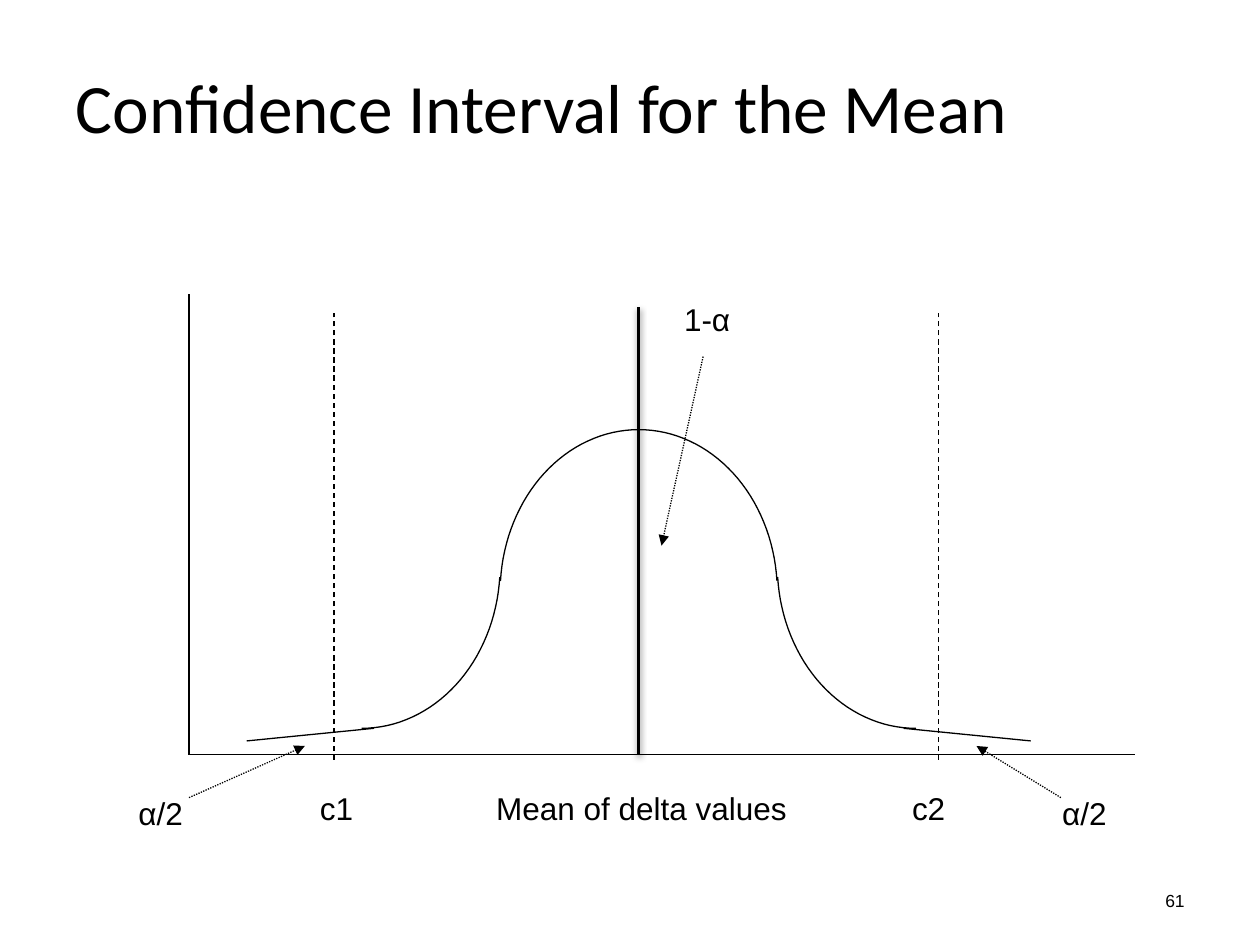
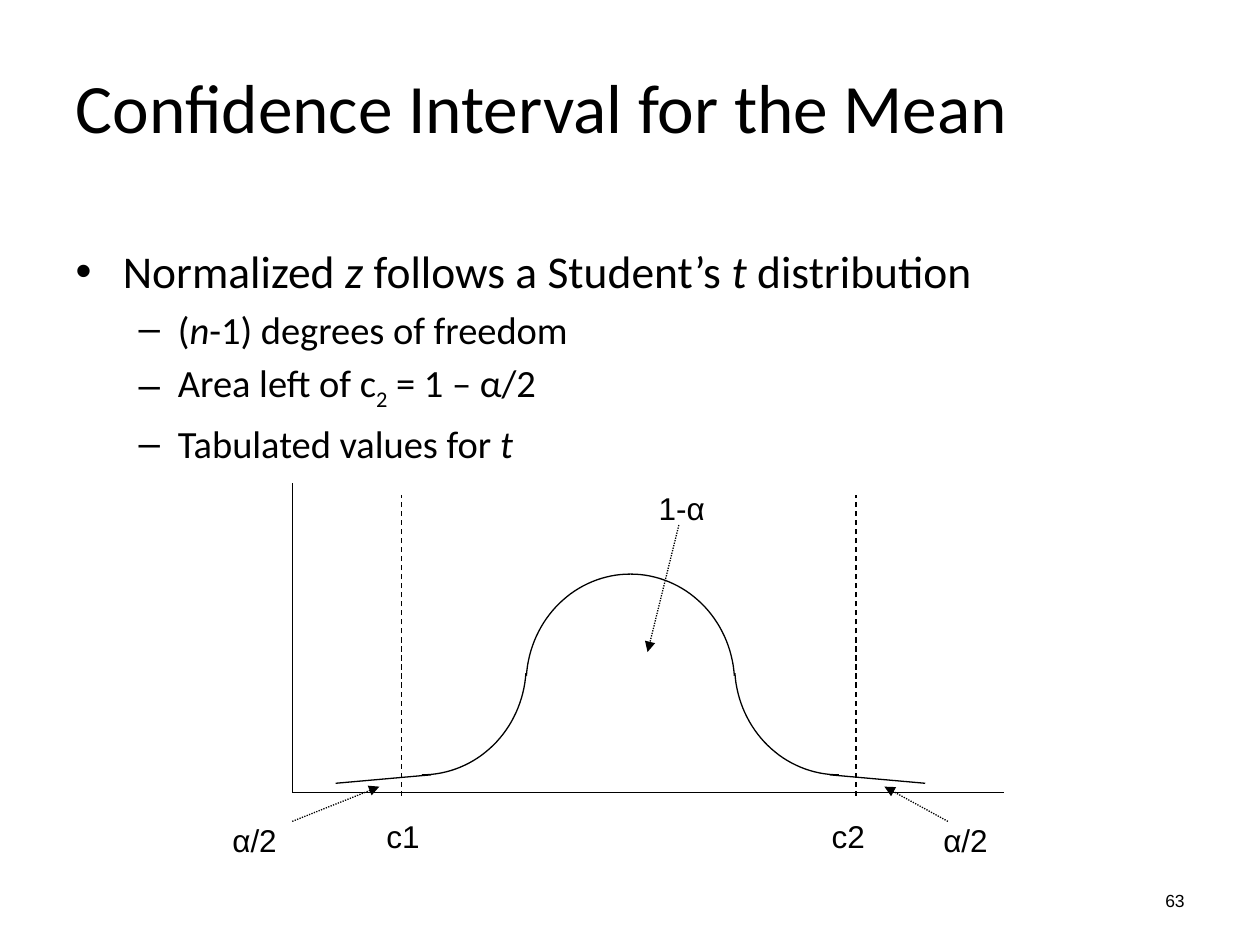
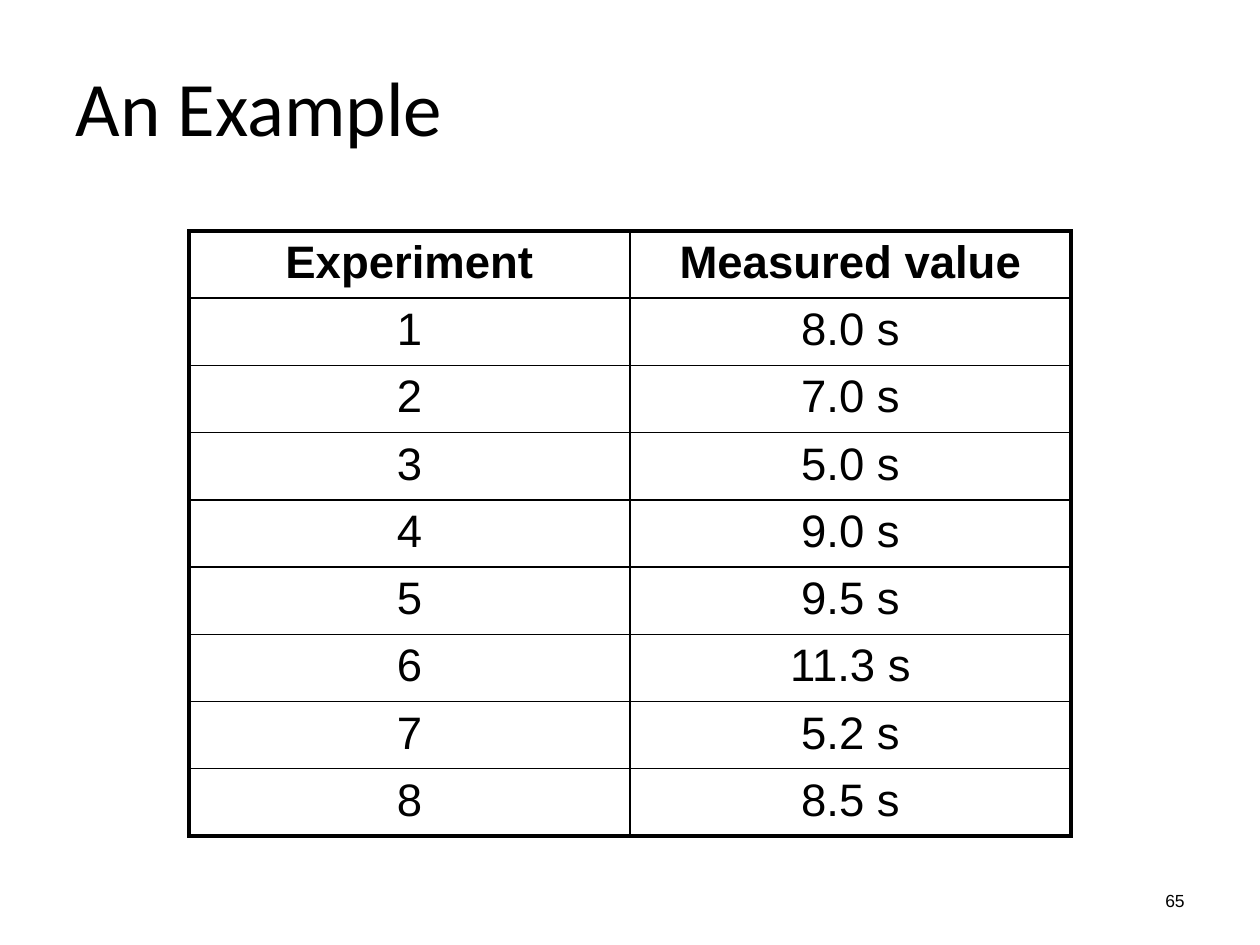
from math import cos, radians, sin

from lxml.etree import SubElement
from pptx import Presentation
from pptx.dml.color import RGBColor
from pptx.enum.dml import MSO_LINE
from pptx.enum.shapes import MSO_CONNECTOR
from pptx.enum.text import MSO_ANCHOR, MSO_AUTO_SIZE, PP_ALIGN
from pptx.oxml.ns import qn
from pptx.util import Pt

COLORS = {"ink": "000000", "paper": "FFFFFF"}
HEAD_FONT = "Calibri"
TEXT_FONT = "Arial"
TITLE_AND_BODY, TITLE_ONLY = 1, 5
ARC_STEPS = 32
ARC_END = 86


class Deck:
    def __init__(self):
        self.prs = Presentation()
        self.prs.slide_width, self.prs.slide_height = Pt(720), Pt(540)
        self.ink = RGBColor.from_string(COLORS["ink"])
        self.s = None

    def style(self, p, size, font=TEXT_FONT, bold=False):
        for r in p.runs:
            r.font.size, r.font.name, r.font.bold = Pt(size), font, bold
            r.font.color.rgb = self.ink

    def place(self, sp, x, y, w, h):
        sp.left, sp.top, sp.width, sp.height = Pt(x), Pt(y), Pt(w), Pt(h)

    def slide(self, layout, title, number, size=39.6):
        self.s = self.prs.slides.add_slide(self.prs.slide_layouts[layout])
        fill = self.s.background.fill
        fill.solid()
        fill.fore_color.rgb = RGBColor.from_string(COLORS["paper"])
        sp = self.s.shapes.title
        self.place(sp, 36, 9.4, 594, 102)
        tf = sp.text_frame
        tf.text = title
        tf.auto_size = MSO_AUTO_SIZE.NONE
        tf.vertical_anchor = MSO_ANCHOR.MIDDLE
        tf.paragraphs[0].alignment = PP_ALIGN.LEFT
        self.style(tf.paragraphs[0], size, HEAD_FONT)
        tf = self.text(number, 516, 500.4, 168, size=10, wrap=True)
        tf.vertical_anchor = MSO_ANCHOR.MIDDLE
        tf.paragraphs[0].alignment = PP_ALIGN.RIGHT

    def text(self, text, x, y, w, size=18, wrap=False):
        sp = self.s.shapes.add_textbox(Pt(x), Pt(y), Pt(w), Pt(28.8))
        tf = sp.text_frame
        tf.text = text
        tf.word_wrap = wrap
        self.style(tf.paragraphs[0], size)
        return tf

    def bullets(self, items, x, y, w, h):
        sp = self.s.placeholders[1]
        self.place(sp, x, y, w, h)
        tf = sp.text_frame
        tf.auto_size = MSO_AUTO_SIZE.NONE
        for i, (level, parts) in enumerate(items):
            p = tf.add_paragraph() if i else tf.paragraphs[0]
            p.level = level
            for text, kind in parts:
                r = p.add_run()
                r.text = text
                r.font.italic = kind == "italic"
                if kind == "sub":
                    r._r.get_or_add_rPr().set("baseline", "-25000")
            self.style(p, 22 if level else 26, HEAD_FONT)

    def line(self, start, end, width=0.75, dash=None, arrow=False, shadow=False):
        ends = [Pt(v) for v in (*start, *end)]
        cxn = self.s.shapes.add_connector(MSO_CONNECTOR.STRAIGHT, *ends)
        cxn.line.color.rgb = self.ink
        cxn.line.width = Pt(width)
        if dash:
            cxn.line.dash_style = dash
        spPr = cxn._element.spPr
        if arrow:
            SubElement(spPr.find(qn("a:ln")), qn("a:tailEnd"), type="triangle")
        effects = SubElement(spPr, qn("a:effectLst"))
        if shadow:
            outer = SubElement(effects, qn("a:outerShdw"), blurRad="40000",
                               dist="20000", dir="5400000", rotWithShape="0")
            clr = SubElement(outer, qn("a:srgbClr"), val=COLORS["ink"])
            SubElement(clr, qn("a:alpha"), val="38000")

    def curve(self, points):
        pts = [(Pt(x), Pt(y)) for x, y in points]
        builder = self.s.shapes.build_freeform(*pts[0])
        builder.add_line_segments(pts[1:], close=False)
        sp = builder.convert_to_shape()
        sp.shadow.inherit = False
        sp.fill.background()
        sp.line.color.rgb = self.ink
        sp.line.width = Pt(0.75)

    def border(self, cell, widths):
        tcPr = cell._tc.get_or_add_tcPr()
        for side, width in widths.items():
            ln = SubElement(tcPr, qn(f"a:ln{side}"), w=str(Pt(width)))
            fill = SubElement(ln, qn("a:solidFill"))
            SubElement(fill, qn("a:srgbClr"), val=COLORS["ink"])

    def table(self, rows, x, y, w, h):
        n, m = len(rows), len(rows[0])
        tbl = self.s.shapes.add_table(n, m, Pt(x), Pt(y), Pt(w), Pt(h)).table
        tbl.first_row = tbl.horz_banding = False
        for i, row in enumerate(rows):
            for j, value in enumerate(row):
                cell = tbl.cell(i, j)
                cell.text = value
                p = cell.text_frame.paragraphs[0]
                p.alignment = PP_ALIGN.CENTER
                self.style(p, 26, bold=i == 0)
                outer = {"L": j == 0, "R": j == m - 1, "T": i == 0, "B": i == n - 1}
                self.border(cell, {k: 2.25 if v else 1 for k, v in outer.items()})
                cell.fill.background()


def draw_distribution(deck, left, bottom, sx=1, sy=1, left_label_width=39.6):
    def at(x, y):
        return left + x * sx, bottom - y * sy

    center, rx, ry = 257, 79.2, 92.9
    for side in (-1, 1):
        arcs = [(center, 92.9, side, 1), (center + side * 2 * rx, 108, -side, -1)]
        for cx, cy, dx, dy in arcs:
            angles = [radians(ARC_END * i / ARC_STEPS) for i in range(ARC_STEPS + 1)]
            deck.curve([at(cx + dx * rx * sin(a), cy + dy * ry * cos(a)) for a in angles])
        deck.line(at(center + side * 151.4, 15.1), at(center + side * 224, 7.9))

    deck.line(at(0, 0), at(540.7, 0))
    deck.line(at(0, 0), at(0, 263.5))
    for x in (82.8, 428.4):
        deck.line(at(x, -2.9), at(x, 252.7), dash=MSO_LINE.DASH)

    labels = [("c1", 84.6, -15.8, 33.8), ("c2", 423, -15.8, 33.8),
              ("1-α", 296.3, 263.5, 41), ("α/2", -16.2, -18.7, left_label_width),
              ("α/2", 511.6, -18.7, 39.6)]
    for text, mid, top, w in labels:
        x, y = at(mid, top)
        deck.text(text, x - w / 2, y, w)

    arrows = [((0, -24.5), (66.2, 5)), ((498.2, -24.5), (450, 5)),
              ((293.8, 227.5), (270, 119.5))]
    for start, end in arrows:
        deck.line(at(*start), at(*end), dash=MSO_LINE.ROUND_DOT, arrow=True)


def main():
    deck = Deck()

    deck.slide(TITLE_ONLY, "Confidence Interval for the Mean", "61")
    draw_distribution(deck, 108, 431.3)
    deck.text("Mean of delta values", 276.5, 447.1, 182.2)
    deck.line((365, 431.3), (365, 175.7), width=2, shadow=True)

    deck.slide(TITLE_AND_BODY, "Confidence Interval for the Mean", "63")
    deck.bullets([
        (0, [("Normalized", ""), (" z", "italic"), (" follows a Student’s ", ""),
             ("t", "italic"), (" distribution", "")]),
        (1, [("(", ""), ("n", "italic"), ("-1) degrees of freedom", "")]),
        (1, [("Area left of c", ""), ("2", "sub"), (" = 1 – α/2", "")]),
        (1, [("Tabulated values for ", ""), ("t", "italic")]),
    ], 36, 135.4, 635, 180)
    draw_distribution(deck, 167, 452.9, 0.752, 0.672, left_label_width=58.3)

    deck.slide(TITLE_ONLY, "An Example", "65", size=44)
    times = ["8.0", "7.0", "5.0", "9.0", "9.5", "11.3", "5.2", "8.5"]
    rows = [(str(i), f"{t} s") for i, t in enumerate(times, 1)]
    deck.table([("Experiment", "Measured value"), *rows], 108, 132, 504, 345.6)

    deck.prs.save("out.pptx")


if __name__ == "__main__":
    main()
